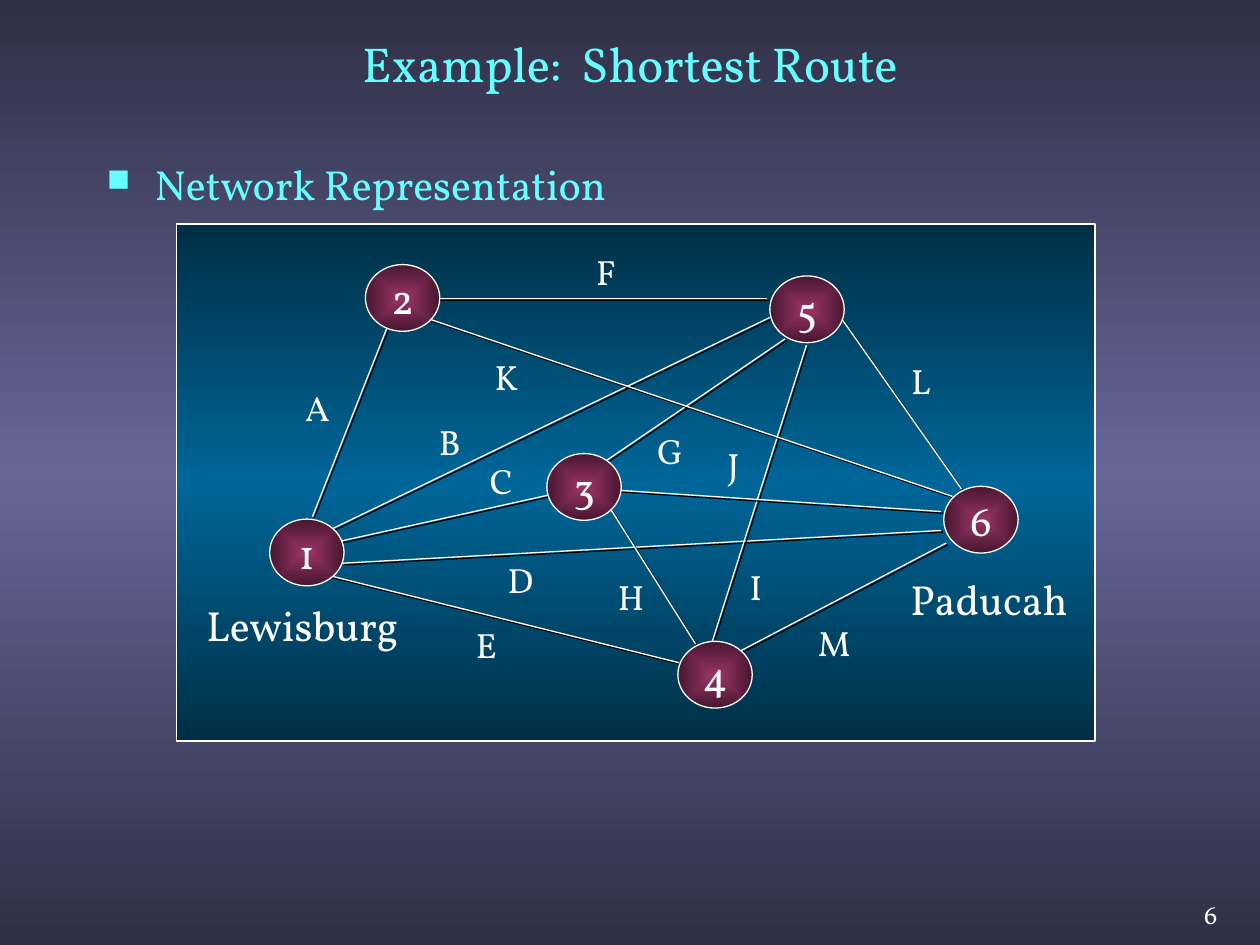
from lxml import etree
from pptx import Presentation
from pptx.dml.color import RGBColor
from pptx.enum.shapes import MSO_CONNECTOR, MSO_SHAPE
from pptx.enum.text import MSO_ANCHOR, PP_ALIGN
from pptx.oxml import parse_xml
from pptx.oxml.ns import nsdecls, qn
from pptx.util import Inches, Pt

CENTER, LEFT, RIGHT = PP_ALIGN.CENTER, PP_ALIGN.LEFT, PP_ALIGN.RIGHT
MIDDLE, TOP = MSO_ANCHOR.MIDDLE, MSO_ANCHOR.TOP
RECT, OVAL = MSO_SHAPE.RECTANGLE, MSO_SHAPE.OVAL
STRAIGHT = MSO_CONNECTOR.STRAIGHT

WIDTH, HEIGHT = Inches(10), Inches(7.5)
CELL = WIDTH / 100
FONT = "Vollkorn"
COLORS = {
    "text": "FFFFFF", "accent": "66FFFF", "shadow": "000000",
    "back": "666699", "back_edge": "2F2F46",
    "panel": "006699", "panel_edge": "002F46",
    "node": "993366", "node_edge": "46172F",
}
LINEAR = '<a:lin ang="5400000" scaled="1"/>'
RADIAL = ('<a:path path="shape"><a:fillToRect l="50000" t="50000" '
          'r="50000" b="50000"/></a:path>')

NODE_SIZE = (5.9, 5.3)
NODES = {"1": (21.4, 41.2), "2": (29, 21), "3": (43.4, 36),
         "4": (53.8, 50.9), "5": (61.1, 21.9), "6": (74.9, 38.6)}
EDGES = {
    "A": ((24.8, 41), (30.8, 25.8), (25.2, 30.7)),
    "B": ((26.1, 42.1), (61.1, 25.2), (35.7, 33.4)),
    "C": ((26.8, 43), (43.5, 39.3), (39.8, 36.5)),
    "D": ((27.2, 44.7), (74.7, 42.1), (41.3, 44.3)),
    "E": ((25.8, 45.6), (53.9, 52.6), (38.6, 49.5)),
    "F": ((34.3, 23.7), (60.9, 23.7), (48.1, 19.9)),
    "G": ((48.2, 36.5), (62.3, 26.9), (53.2, 34.1)),
    "H": ((48.4, 40.3), (55.2, 51.1), (50.1, 45.7)),
    "I": ((56.5, 51), (64, 27.4), (60, 44.9)),
    "J": ((48.9, 38.9), (74.7, 40.6), (58.2, 35.2)),
    "K": ((34, 25.3), (75.6, 39.4), (40.2, 28.2)),
    "L": ((66.8, 25.3), (76.3, 38.8), (73.1, 28.5)),
    "M": ((58.5, 51.8), (75.1, 43.1), (66.2, 49.3)),
}
CITIES = {"Lewisburg": (15.1, 47.1, 17.8, 5), "Paducah": (71.1, 45, 14.8, 5)}


def cells(*values):
    return [round(v * CELL) for v in values]


def color(name):
    return RGBColor.from_string(COLORS[name])


def gradient(fill, names, direction):
    fill.gradient()
    grad = fill._xPr.find(qn("a:gradFill"))
    last = len(names) - 1
    stops = "".join(
        f'<a:gs pos="{100000 * i // last}"><a:srgbClr val="{COLORS[n]}"/></a:gs>'
        for i, n in enumerate(names))
    new = parse_xml(f'<a:gradFill {nsdecls("a")} rotWithShape="1">'
                    f'<a:gsLst>{stops}</a:gsLst>{direction}</a:gradFill>')
    grad.getparent().replace(grad, new)


def outline(line, width):
    line.color.rgb = color("text")
    line.width = Pt(width)


def write(s, text, size, name="text", align=CENTER, anchor=MIDDLE,
          wrap=False, inset=0.0):
    tf = s.text_frame
    margin = round(inset * CELL)
    frame = {"word_wrap": wrap, "vertical_anchor": anchor,
             "margin_left": margin, "margin_right": margin,
             "margin_top": margin // 2, "margin_bottom": margin // 2}
    for key, value in frame.items():
        setattr(tf, key, value)
    p = tf.paragraphs[0]
    p.alignment = align
    r = p.add_run()
    r.text = text
    for key, value in {"name": FONT, "size": Pt(size), "bold": False}.items():
        setattr(r.font, key, value)
    r.font.color.rgb = color(name)
    return p


def add_text(slide, box, text, size, **style):
    return write(slide.shapes.add_textbox(*cells(*box)), text, size, **style)


def add_filled(slide, kind, box, names, direction, width):
    s = slide.shapes.add_shape(kind, *cells(*box))
    s.shadow.inherit = False
    gradient(s.fill, names, direction)
    outline(s.line, width)
    return s


def add_edge(slide, label, start, end, middle):
    s = slide.shapes.add_connector(STRAIGHT, *cells(*start, *end))
    outline(s.line, 0.75)
    effects = etree.SubElement(s._element.spPr, qn("a:effectLst"))
    shadow = etree.SubElement(effects, qn("a:outerShdw"),
                              dist=str(Pt(1.4)), dir="2700000", algn="ctr")
    etree.SubElement(shadow, qn("a:srgbClr"), val=COLORS["shadow"])
    add_text(slide, (middle[0] - 1.5, middle[1], 3, 3.3), label, 20, anchor=TOP)


def add_node(slide, number, place):
    s = add_filled(slide, OVAL, (*place, *NODE_SIZE),
                   ("node", "node_edge"), RADIAL, 0.75)
    write(s, number, 24)


def add_title(slide, text):
    s = slide.shapes.title
    s.left, s.top, s.width, s.height = cells(9.1, 1.3, 81.8, 7.4)
    write(s, text, 28, "accent", wrap=True, inset=1)


def add_bullet(slide, box, text):
    p = add_text(slide, box, text, 24, name="accent", align=LEFT,
                 anchor=TOP, wrap=True, inset=1)
    pPr = p._p.get_or_add_pPr()
    indent = Inches(0.38)
    pPr.set("marL", str(indent))
    pPr.set("indent", str(-indent))
    bullet_color = etree.SubElement(pPr, qn("a:buClr"))
    etree.SubElement(bullet_color, qn("a:srgbClr"), val=COLORS["accent"])
    etree.SubElement(pPr, qn("a:buSzPct"), val="75000")
    etree.SubElement(pPr, qn("a:buChar"), char="■")


def main():
    prs = Presentation()
    prs.slide_width, prs.slide_height = WIDTH, HEIGHT
    slide = prs.slides.add_slide(prs.slide_layouts[5])
    gradient(slide.background.fill, ("back_edge", "back", "back_edge"), LINEAR)
    add_title(slide, "Example:  Shortest Route")
    add_bullet(slide, (7.5, 12.1, 56, 5.6), "Network Representation")
    add_filled(slide, RECT, (14, 17.8, 72.9, 41),
               ("panel_edge", "panel", "panel_edge"), LINEAR, 1)
    for label, (start, end, middle) in EDGES.items():
        add_edge(slide, label, start, end, middle)
    for number, place in NODES.items():
        add_node(slide, number, place)
    for city, box in CITIES.items():
        add_text(slide, box, city, 24)
    add_text(slide, (93.6, 70.8, 4, 4), "6", 15, align=RIGHT, anchor=TOP,
             wrap=True, inset=1)
    prs.save("out.pptx")


if __name__ == "__main__":
    main()
